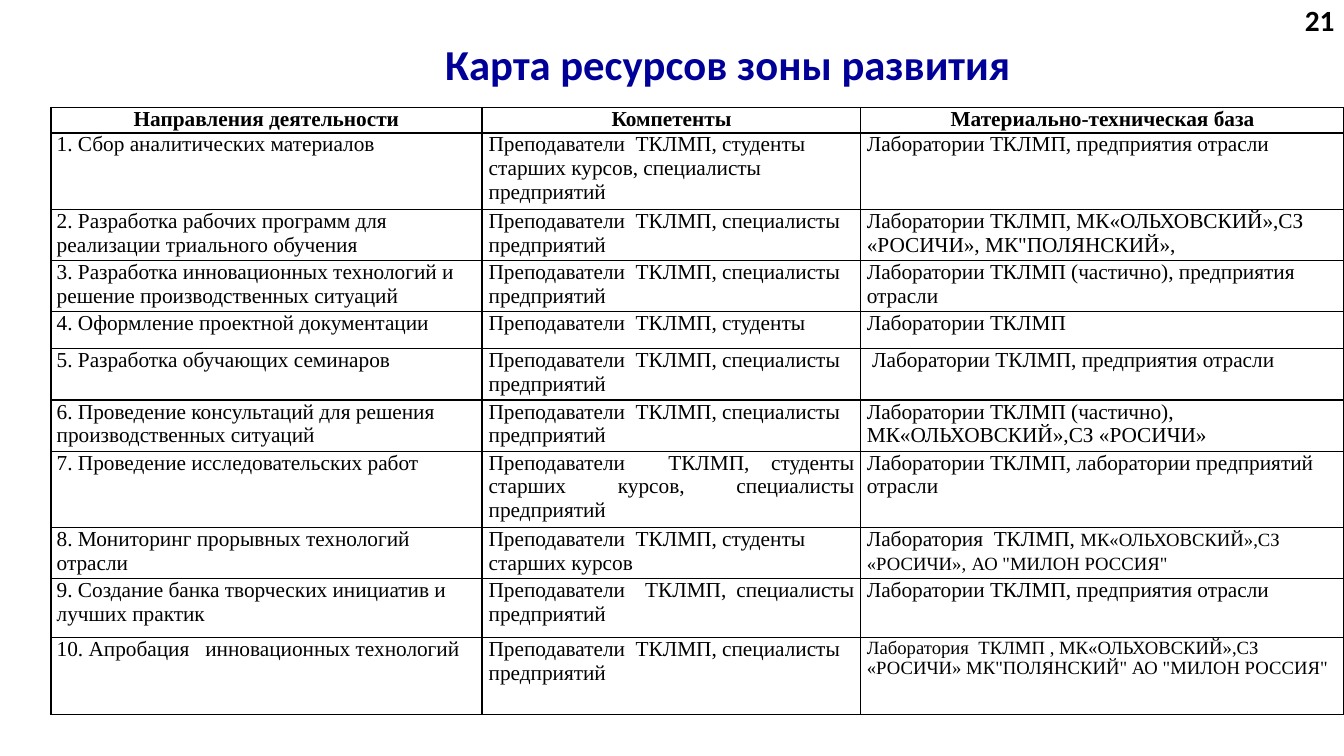
"""Build the slide with the resource map of a development zone."""
from dataclasses import dataclass
from typing import Any

from pptx import Presentation
from pptx.dml.color import RGBColor
from pptx.enum.text import MSO_ANCHOR, PP_ALIGN
from pptx.oxml import parse_xml
from pptx.oxml.ns import nsdecls
from pptx.util import Inches, Pt

NAVY = RGBColor(0x00, 0x00, 0x99)
BLACK = RGBColor(0x00, 0x00, 0x00)

TEACHERS = "Преподаватели  ТКЛМП, "
EXPERTS = TEACHERS + "специалисты предприятий"
SENIORS = TEACHERS + "студенты старших курсов"
SENIORS_EXPERTS = SENIORS + ", специалисты предприятий"
LABS = "Лаборатории ТКЛМП"
LABS_FIRMS = LABS + ", предприятия отрасли"
LABS_PARTLY = LABS + " (частично), "
PLANTS = "МК«ОЛЬХОВСКИЙ»,СЗ «РОСИЧИ»"
DAIRY = 'АО "МИЛОН РОССИЯ"'

HEADER = ["Направления деятельности", "Компетенты", "Материально-техническая база"]
ROWS = [
    ["1. Сбор аналитических материалов", SENIORS_EXPERTS, LABS_FIRMS],
    ["2. Разработка рабочих программ для реализации триального обучения",
     EXPERTS, f'{LABS}, {PLANTS}, МК"ПОЛЯНСКИЙ»,'],
    ["3. Разработка инновационных технологий и решение производственных ситуаций",
     EXPERTS, LABS_PARTLY + "предприятия отрасли"],
    ["4. Оформление проектной документации", TEACHERS + "студенты", LABS],
    ["5. Разработка обучающих семинаров", EXPERTS, " " + LABS_FIRMS],
    ["6. Проведение консультаций для решения производственных ситуаций",
     EXPERTS, LABS_PARTLY + PLANTS],
    ["7. Проведение исследовательских работ", SENIORS_EXPERTS,
     LABS + ", лаборатории предприятий отрасли"],
    ["8. Мониторинг прорывных технологий отрасли", SENIORS,
     [("Лаборатория  ТКЛМП, ", 16), (PLANTS + ",", 14), (" ", 16), (DAIRY, 14)]],
    ["9. Создание банка творческих инициатив и лучших практик", EXPERTS, LABS_FIRMS],
    ["10. Апробация   инновационных технологий", EXPERTS,
     [(f'Лаборатория  ТКЛМП , {PLANTS} МК"ПОЛЯНСКИЙ" {DAIRY}', 14)]],
]
COLUMN_SHARES = [4.49, 3.94, 5.04]
ROW_LINES = [1, 3, 2, 2, 1.45, 2, 2, 3, 2, 2.3, 3]
JUSTIFIED = {(7, 1), (9, 1)}


@dataclass
class Board:
    """Hold the style and the current slide, with lengths as percent of its size."""
    prs: Any
    s: Any
    heading_font: str = "Calibri"
    table_font: str = "Times New Roman"

    def box(self, x, y, w, h):
        """Turn percentages into left, top, width and height."""
        width, height = self.prs.slide_width, self.prs.slide_height
        return [round(v * full / 100)
                for v, full in ((x, width), (y, height), (w, width), (h, height))]

    def add_text(self, tf, runs, font, color, bold, align, anchor=MSO_ANCHOR.TOP):
        """Add one paragraph run by run."""
        tf.word_wrap = True
        tf.vertical_anchor = anchor
        p = tf.paragraphs[0]
        p.alignment = align
        for text, size in runs:
            r = p.add_run()
            r.text = text
            r.font.name = font
            r.font.size = Pt(size)
            r.font.bold = bold
            r.font.color.rgb = color

    def title(self, text, *area):
        """Move and fill the title placeholder."""
        sp = self.s.shapes.title
        sp.left, sp.top, sp.width, sp.height = self.box(*area)
        self.add_text(sp.text_frame, [(text, 32)], self.heading_font, NAVY, True,
                      PP_ALIGN.CENTER)

    def number(self, text, *area):
        """Add the page number."""
        sp = self.s.shapes.add_textbox(*self.box(*area))
        self.add_text(sp.text_frame, [(text, 22)], self.heading_font, BLACK, True,
                      PP_ALIGN.RIGHT, MSO_ANCHOR.MIDDLE)

    def border(self, cell):
        """Draw thin black lines on all sides of a cell."""
        tc_pr = cell._tc.get_or_add_tcPr()
        for i, side in enumerate(("lnL", "lnR", "lnT", "lnB")):
            tc_pr.insert(i, parse_xml(
                f'<a:{side} {nsdecls("a")} w="{Pt(1)}"><a:solidFill>'
                f'<a:srgbClr val="{BLACK}"/></a:solidFill></a:{side}>'))

    def cell(self, cell, content, column, bold, align):
        """Fill and style one table cell."""
        cell.margin_left = Inches(0.07 if column else 0.06)
        cell.margin_right = Inches(0.06)
        cell.margin_top = cell.margin_bottom = 0
        cell.fill.background()
        self.border(cell)
        runs = [(content, 16)] if isinstance(content, str) else content
        self.add_text(cell.text_frame, runs, self.table_font, BLACK, bold, align)

    def table(self, rows, columns, lines, *area):
        """Add a table whose columns and rows share the area by weight."""
        x, y, w, h = self.box(*area)
        table = self.s.shapes.add_table(len(rows), len(columns), x, y, w, h).table
        table.first_row = table.horz_banding = False
        for column, share in zip(table.columns, columns):
            column.width = round(w * share / sum(columns))
        for row, count in zip(table.rows, lines):
            row.height = round(h * count / sum(lines))
        for i, row in enumerate(rows):
            for j, content in enumerate(row):
                align = PP_ALIGN.LEFT if i else PP_ALIGN.CENTER
                if (i, j) in JUSTIFIED:
                    align = PP_ALIGN.JUSTIFY
                self.cell(table.cell(i, j), content, j, i == 0, align)


def main():
    """Build and save the slide."""
    prs = Presentation()
    prs.slide_width, prs.slide_height = Inches(14), Inches(7.88)
    board = Board(prs, prs.slides.add_slide(prs.slide_layouts[5]))
    board.table([HEADER, *ROWS], COLUMN_SHARES, ROW_LINES, 3.79, 14.21, 96.21, 80.33)
    board.title("Карта ресурсов зоны развития", 22.64, 4.31, 63.07, 8.12)
    board.number("21", 76.64, 0, 23.36, 5.33)
    prs.save("out.pptx")


if __name__ == "__main__":
    main()
